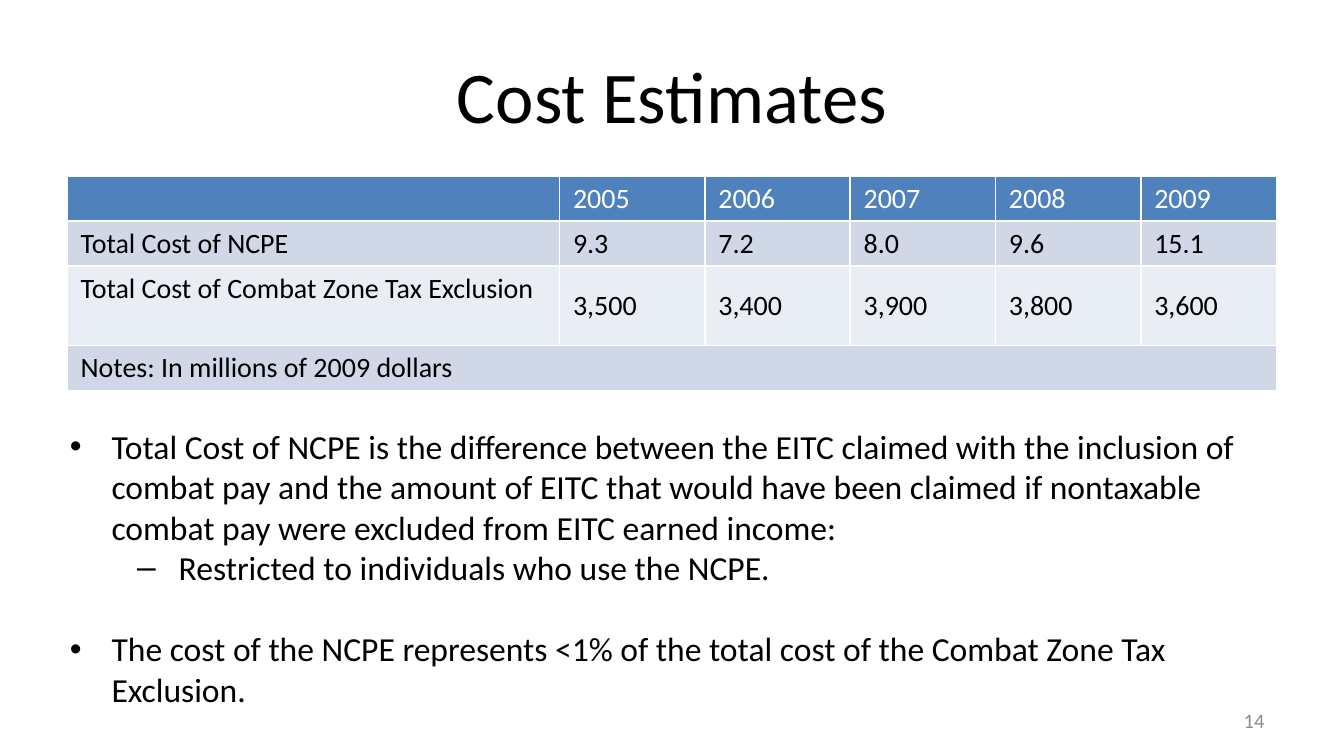
from pptx import Presentation
from pptx.dml.color import RGBColor as RGB
from pptx.enum.text import MSO_ANCHOR as Anchor, MSO_AUTO_SIZE as Fit, PP_ALIGN as Align
from pptx.util import Inches, Pt

W = 10
H = W * 9 / 16
FONT = "Calibri"
COLORS = {"text": "000000", "header": "4F81BD", "header_text": "FFFFFF",
          "band": "D0D8E8", "plain": "E9EDF4", "number": "8C8C8C"}
COLUMNS = [3.66] + [1.08] * 4 + [1.01]
ROWS = [
    (0.33, "header", ["", "2005", "2006", "2007", "2008", "2009"]),
    (0.33, "band", ["Total Cost of NCPE", "9.3", "7.2", "8.0", "9.6", "15.1"]),
    (0.59, "plain", ["Total Cost of Combat Zone Tax Exclusion",
                     "3,500", "3,400", "3,900", "3,800", "3,600"]),
    (0.33, "band", ["Notes: In millions of 2009 dollars"]),
]
BULLETS = [
    (0, 0, "Total Cost of NCPE is the difference between the EITC claimed with the "
           "inclusion of combat pay and the amount of EITC that would have been claimed "
           "if nontaxable combat pay were excluded from EITC earned income:"),
    (1, 0, "Restricted to individuals who use the NCPE."),
    (0, 22, "The cost of the NCPE represents <1% of the total cost of the Combat Zone "
            "Tax Exclusion."),
]
INDENTS = [0.31, 0.81]
HANGING = 0.31


def place(sp, box):
    x, y, w, h = box
    sp.left, sp.top = Inches(x * W), Inches(y * H)
    sp.width, sp.height = Inches(w * W), Inches(h * H)


def style(p, size, color):
    p.font.name, p.font.size, p.font.bold = FONT, Pt(size), False
    p.font.color.rgb = RGB.from_string(COLORS[color])


def prepare_frame(tf, anchor):
    tf.word_wrap, tf.auto_size, tf.vertical_anchor = True, Fit.NONE, anchor
    tf.margin_left = tf.margin_right = Inches(0.09)
    tf.margin_top = tf.margin_bottom = Inches(0.04)


def add_title(s, box, text):
    sp = s.shapes.title
    place(sp, box)
    prepare_frame(sp.text_frame, Anchor.MIDDLE)
    p = sp.text_frame.paragraphs[0]
    p.text, p.alignment = text, Align.CENTER
    style(p, 39, "text")


def add_cost_table(s, box):
    x, y, w, h = box
    sp = s.shapes.add_table(len(ROWS), len(COLUMNS), Inches(x * W), Inches(y * H),
                            Inches(w * W), Inches(h * H))
    table = sp.table
    for column, width in zip(table.columns, COLUMNS):
        column.width = Inches(w * W * width / sum(COLUMNS))
    for r, (height, fill, values) in enumerate(ROWS):
        table.rows[r].height = Inches(height)
        for c in range(len(COLUMNS)):
            cell = table.cell(r, c)
            cell.fill.solid()
            cell.fill.fore_color.rgb = RGB.from_string(COLORS[fill])
            cell.margin_left = cell.margin_right = Inches(0.1)
            cell.margin_top = cell.margin_bottom = Inches(0.04)
            p = cell.text_frame.paragraphs[0]
            p.text = values[c] if c < len(values) else ""
            style(p, 15, "header_text" if fill == "header" else "text")
            if fill == "plain" and c > 0:
                cell.vertical_anchor = Anchor.MIDDLE
    table.cell(len(ROWS) - 1, 0).merge(table.cell(len(ROWS) - 1, len(COLUMNS) - 1))


def add_bullets(s, box):
    sp = s.placeholders[1]
    place(sp, box)
    tf = sp.text_frame
    prepare_frame(tf, Anchor.TOP)
    for i, (level, gap, text) in enumerate(BULLETS):
        p = tf.add_paragraph() if i else tf.paragraphs[0]
        p.text, p.level = text, level
        p.space_before, p.space_after = Pt(gap), Pt(0)
        style(p, 18, "text")
        pPr = p._p.get_or_add_pPr()
        pPr.set("marL", str(Inches(INDENTS[level])))
        pPr.set("indent", str(-Inches(HANGING)))


def add_page_number(s, box, number):
    sp = s.shapes.add_textbox(0, 0, 0, 0)
    place(sp, box)
    prepare_frame(sp.text_frame, Anchor.MIDDLE)
    p = sp.text_frame.paragraphs[0]
    p.text, p.alignment = str(number), Align.RIGHT
    style(p, 11, "number")


def main():
    prs = Presentation()
    prs.slide_width, prs.slide_height = Inches(W), Inches(H)
    s = prs.slides.add_slide(prs.slide_layouts[1])
    add_title(s, (0.05, 0.23 / H, 0.9, 0.94 / H), "Cost Estimates")
    add_cost_table(s, (0.05, 1.31 / H, 0.9, 1.59 / H))
    add_page_number(s, (7.17 / W, 5.21 / H, 2.33 / W, 0.3 / H), 14)
    add_bullets(s, (0.43 / W, 3.13 / H, 9.25 / W, 2.21 / H))
    prs.save("out.pptx")


if __name__ == "__main__":
    main()
